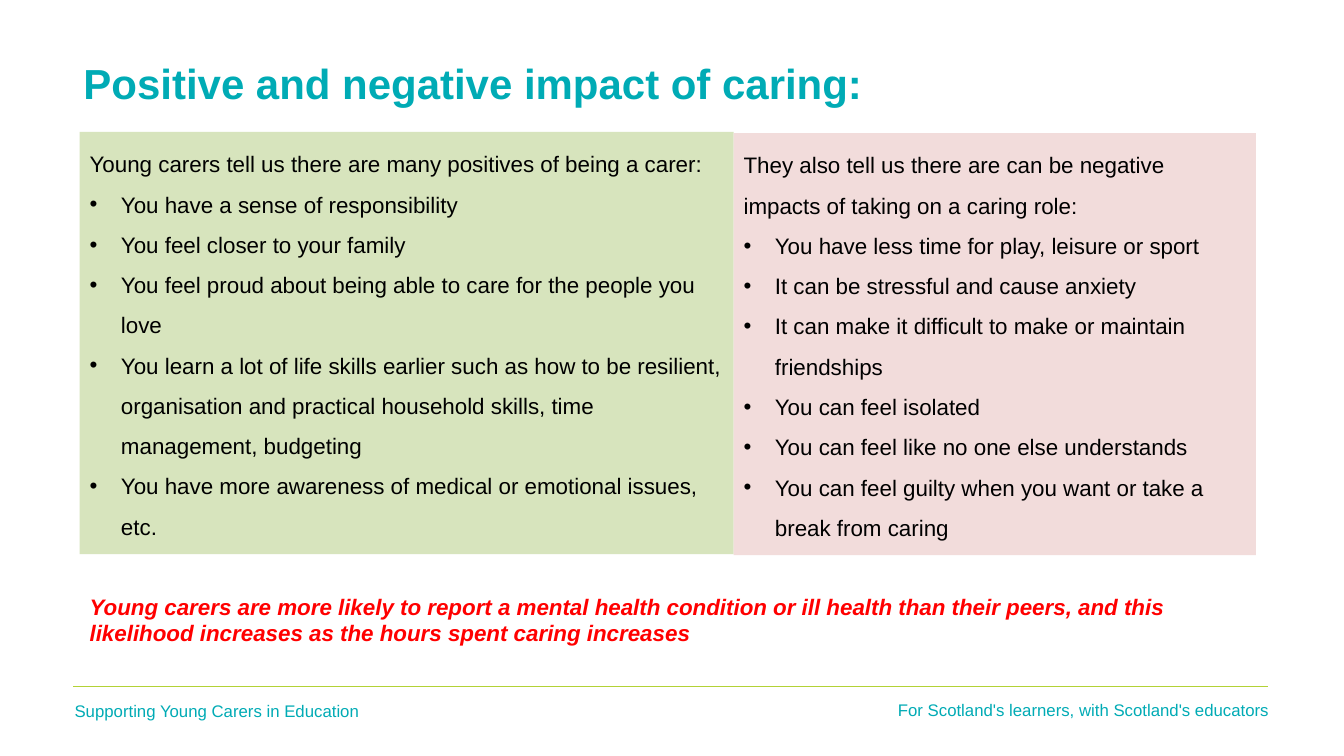
from lxml import etree
from pptx import Presentation
from pptx import util as u
from pptx.dml import color
from pptx.enum import shapes, text
from pptx.oxml import ns

COLOURS = {
    "teal": "00ABB5",
    "lime": "B3D236",
    "green": "D7E4BD",
    "pink": "F2DCDB",
    "black": "000000",
    "red": "FF0000",
}


def rgb(name):
    return color.RGBColor.from_string(COLOURS[name])


def add_text(paragraph, wording, size, colour, bold=False, italic=False):
    run = paragraph.add_run()
    run.text = wording
    run.font.name = "Arial"
    run.font.size = u.Pt(size)
    run.font.bold = bold
    run.font.italic = italic
    run.font.color.rgb = rgb(colour)


deck = Presentation()
deck.slide_width = u.Cm(33.87)
deck.slide_height = u.Cm(19.05)
slide = deck.slides.add_slide(deck.slide_layouts[5])

rule = slide.shapes.add_connector(
    shapes.MSO_CONNECTOR.STRAIGHT, u.Cm(1.85), u.Cm(17.3), u.Cm(31.95), u.Cm(17.3))
rule.line.color.rgb = rgb("lime")
rule.line.width = u.Pt(0.75)
etree.SubElement(rule._element.spPr, ns.qn("a:effectLst"))

heading = slide.shapes.title
heading.left, heading.top = u.Cm(1.85), u.Cm(1.09)
heading.width, heading.height = u.Cm(30.1), u.Cm(1.98)
heading.text_frame.auto_size = text.MSO_AUTO_SIZE.NONE
heading.text_frame.vertical_anchor = text.MSO_ANCHOR.MIDDLE
heading_line = heading.text_frame.paragraphs[0]
heading_line.alignment = text.PP_ALIGN.LEFT
add_text(heading_line, "Positive and negative impact of caring:", 30, "teal", bold=True)

impacts = [
    (2.01, 1.31, 16.48, "green",
     "Young carers tell us there are many positives of being a carer:",
     ["You have a sense of responsibility",
      "You feel closer to your family",
      "You feel proud about being able to care for the people you love",
      "You learn a lot of life skills earlier such as how to be resilient, "
      "organisation and practical household skills, time management, budgeting",
      "You have more awareness of medical or emotional issues, etc."]),
    (18.49, 1.32, 13.16, "pink",
     "They also tell us there are can be negative impacts of taking on a caring role:",
     ["You have less time for play, leisure or sport",
      "It can be stressful and cause anxiety",
      "It can make it difficult to make or maintain friendships",
      "You can feel isolated",
      "You can feel like no one else understands",
      "You can feel guilty when you want or take a break from caring"]),
]
for left, top, width, fill, intro, points in impacts:
    panel = slide.shapes.add_shape(
        shapes.MSO_SHAPE.RECTANGLE, u.Cm(left), u.Cm(top * 2.54), u.Cm(width), u.Cm(10.64))
    panel.shadow.inherit = False
    panel.fill.solid()
    panel.fill.fore_color.rgb = rgb(fill)
    panel.line.fill.background()
    frame = panel.text_frame
    frame.word_wrap = True
    frame.auto_size = text.MSO_AUTO_SIZE.SHAPE_TO_FIT_TEXT
    frame.vertical_anchor = text.MSO_ANCHOR.TOP
    for number, wording in enumerate([intro] + points):
        paragraph = frame.add_paragraph() if number else frame.paragraphs[0]
        paragraph.alignment = text.PP_ALIGN.LEFT
        paragraph.line_spacing = 1.5
        if number:
            properties = paragraph._p.get_or_add_pPr()
            properties.set("marL", str(u.Cm(0.79)))
            properties.set("indent", str(u.Cm(-0.79)))
            etree.SubElement(properties, ns.qn("a:buFont")).set("typeface", "Arial")
            etree.SubElement(properties, ns.qn("a:buChar")).set("char", "•")
        add_text(paragraph, wording, 16, "black")

notes = [
    (2.01, 14.81, 29.95, 1.63, 16, "red", True, text.PP_ALIGN.LEFT,
     "Young carers are more likely to report a mental health condition or ill health "
     "than their peers, and this likelihood increases as the hours spent caring increases"),
    (1.63, 17.53, 8.41, 0.76, 12, "teal", False, text.PP_ALIGN.LEFT,
     "Supporting Young Carers in Education"),
    (20.68, 17.5, 11.56, 0.76, 12, "teal", False, text.PP_ALIGN.RIGHT,
     "For Scotland's learners, with Scotland's educators"),
]
for left, top, width, height, size, colour, stressed, alignment, wording in notes:
    note = slide.shapes.add_textbox(u.Cm(left), u.Cm(top), u.Cm(width), u.Cm(height))
    note.text_frame.word_wrap = True
    note.text_frame.auto_size = text.MSO_AUTO_SIZE.SHAPE_TO_FIT_TEXT
    note_line = note.text_frame.paragraphs[0]
    note_line.alignment = alignment
    add_text(note_line, wording, size, colour, bold=stressed, italic=stressed)

deck.save("out.pptx")
